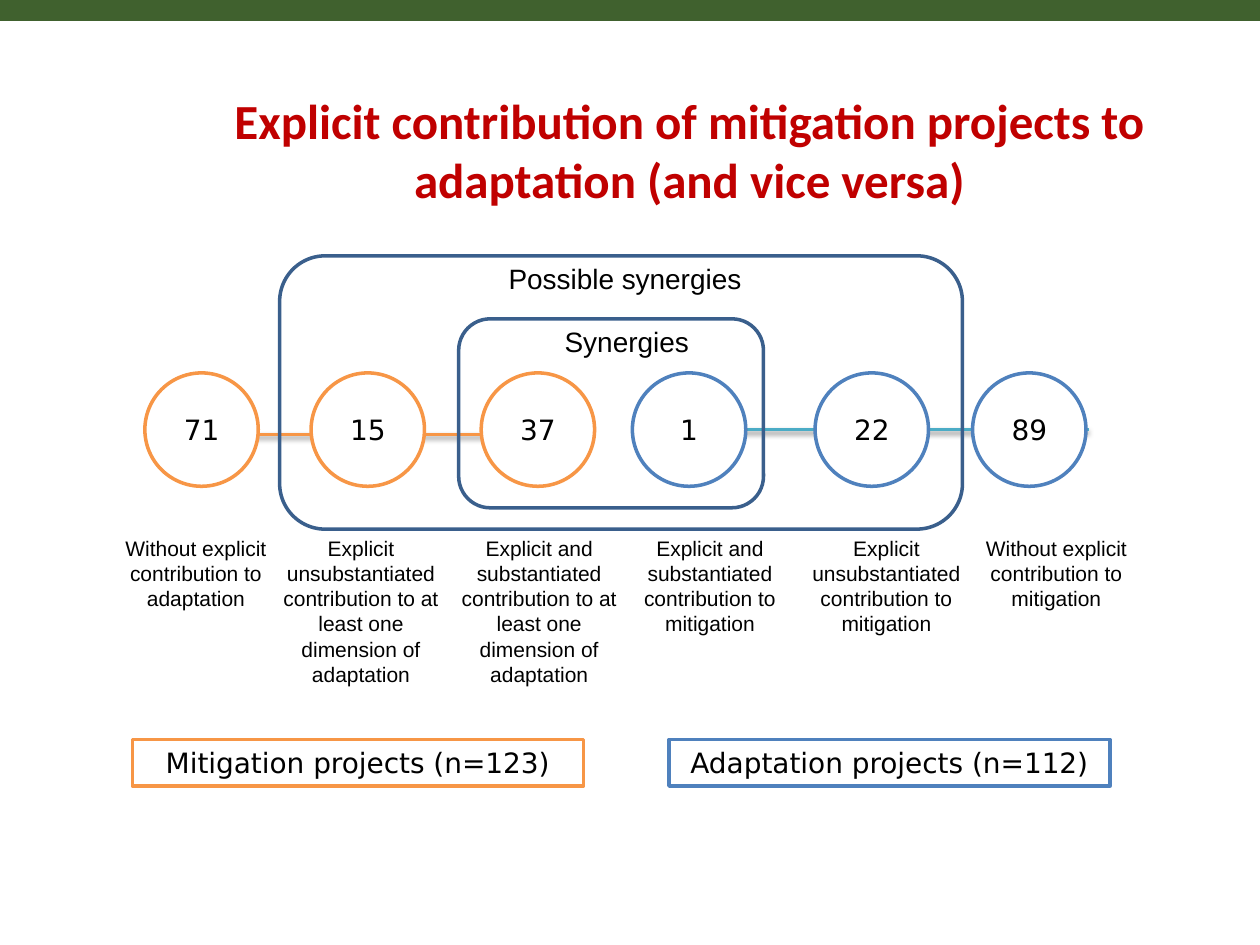
from lxml.etree import SubElement
from pptx import Presentation
from pptx.dml.color import RGBColor
from pptx.enum.shapes import MSO_CONNECTOR, MSO_SHAPE
from pptx.enum.text import MSO_ANCHOR, MSO_AUTO_SIZE, PP_ALIGN
from pptx.oxml.ns import qn
from pptx.util import Pt

GREEN = RGBColor(0x40, 0x61, 0x2E)
RED = RGBColor(0xC0, 0x00, 0x00)
ORANGE = RGBColor(0xF7, 0x96, 0x46)
BLUE = RGBColor(0x4F, 0x81, 0xBD)
TEAL = RGBColor(0x4B, 0xAC, 0xC6)
NAVY = RGBColor(0x3A, 0x5F, 0x8C)
WHITE = RGBColor(0xFF, 0xFF, 0xFF)
BLACK = RGBColor(0x00, 0x00, 0x00)

CIRCLE_TOP, CIRCLE_SIZE = 213.1, 64.8
LABEL_TOP = 302.4

CATEGORIES = [
    ("71", ORANGE, 82.8, 64.1, 95.8, 65.5, "Without explicit contribution to adaptation"),
    ("15", ORANGE, 177.8, 151.2, 110.2, 94.3,
     "Explicit unsubstantiated contribution to at least one dimension of adaptation"),
    ("37", ORANGE, 275, 255.6, 105.1, 94.3,
     "Explicit and substantiated contribution to at least one dimension of adaptation"),
    ("1", BLUE, 361.4, 357.1, 97.2, 65.5,
     "Explicit and substantiated contribution to mitigation"),
    ("22", BLUE, 465.8, 449.3, 114.5, 65.5,
     "Explicit unsubstantiated contribution to mitigation"),
    ("89", BLUE, 555.8, 555.8, 95.8, 65.5, "Without explicit contribution to mitigation"),
]


def write_text(frame, text, size=16, font="DejaVu Sans", color=BLACK, bold=False,
               anchor=MSO_ANCHOR.TOP, fit=MSO_AUTO_SIZE.NONE):
    frame.word_wrap = True
    frame.auto_size = fit
    frame.vertical_anchor = anchor
    paragraph = frame.paragraphs[0]
    paragraph.text = text
    paragraph.alignment = PP_ALIGN.CENTER
    paragraph.font.size = Pt(size)
    paragraph.font.name = font
    paragraph.font.bold = bold
    paragraph.font.color.rgb = color


class SlideBuilder:
    line_width = Pt(2)
    label_font = "Arial"

    def __init__(self, slide):
        self.slide = slide

    def title(self, text, left, top, width, height):
        shape = self.slide.shapes.title
        shape.left, shape.top, shape.width, shape.height = map(Pt, (left, top, width, height))
        write_text(shape.text_frame, text, size=28, font="Calibri", color=RED, bold=True)

    def shape(self, kind, left, top, width, height, fill=None, line=None):
        shape = self.slide.shapes.add_shape(kind, *map(Pt, (left, top, width, height)))
        shape.shadow.inherit = False
        if fill is None:
            shape.fill.background()
        else:
            shape.fill.solid()
            shape.fill.fore_color.rgb = fill
        if line is None:
            shape.line.fill.background()
        else:
            shape.line.color.rgb = line
            shape.line.width = self.line_width
        return shape

    def circle(self, text, left, color):
        shape = self.shape(MSO_SHAPE.OVAL, left, CIRCLE_TOP, CIRCLE_SIZE, CIRCLE_SIZE,
                           fill=WHITE, line=color)
        write_text(shape.text_frame, text, anchor=MSO_ANCHOR.MIDDLE)

    def group_box(self, text, left, width, color):
        shape = self.shape(MSO_SHAPE.RECTANGLE, left, 422.6, width, 26.6, fill=WHITE, line=color)
        write_text(shape.text_frame, text, fit=MSO_AUTO_SIZE.SHAPE_TO_FIT_TEXT)

    def label(self, text, left, top, width, height, size):
        box = self.slide.shapes.add_textbox(*map(Pt, (left, top, width, height)))
        write_text(box.text_frame, text, size=size, font=self.label_font,
                   fit=MSO_AUTO_SIZE.SHAPE_TO_FIT_TEXT)

    def frame(self, text, left, top, width, height, label_left, label_width):
        self.shape(MSO_SHAPE.ROUNDED_RECTANGLE, left, top, width, height, line=NAVY)
        self.label(text, label_left, top, label_width, 26.6, 16)

    def link(self, start, end, y, color):
        connector = self.slide.shapes.add_connector(
            MSO_CONNECTOR.STRAIGHT, Pt(start), Pt(y), Pt(end), Pt(y))
        connector.line.color.rgb = color
        connector.line.width = self.line_width
        properties = connector._element.spPr
        effects = SubElement(properties, qn("a:effectLst"))
        shadow = SubElement(effects, qn("a:outerShdw"), blurRad=str(Pt(3.1)),
                            dist=str(Pt(1.6)), dir="5400000", rotWithShape="0")
        shadow_color = SubElement(shadow, qn("a:srgbClr"), val=str(BLACK))
        SubElement(shadow_color, qn("a:alpha"), val="38000")


def main():
    presentation = Presentation()
    presentation.slide_width, presentation.slide_height = Pt(720), Pt(540)
    builder = SlideBuilder(presentation.slides.add_slide(presentation.slide_layouts[5]))

    builder.shape(MSO_SHAPE.RECTANGLE, 0, 0, 720, 12, fill=GREEN)
    builder.title("Explicit contribution of mitigation projects to adaptation (and vice versa)",
                  67.7, 48.2, 652.3, 54)

    builder.link(118.1, 309.6, 248.4, ORANGE)
    builder.link(381.6, 622.1, 245.5, TEAL)

    for count, color, circle_left, label_left, label_width, label_height, text in CATEGORIES:
        builder.circle(count, circle_left, color)
        builder.label(text, label_left, LABEL_TOP, label_width, label_height, 12)

    builder.group_box("Mitigation projects (n=123)", 75.6, 257.8, ORANGE)
    builder.group_box("Adaptation projects (n=112)", 382.3, 252, BLUE)

    builder.frame("Synergies", 262.1, 182.2, 174.2, 108, 262.1, 192.2)
    builder.frame("Possible synergies", 159.8, 146.2, 390.2, 156.2, 268.6, 177.1)

    presentation.save("out.pptx")


if __name__ == "__main__":
    main()
